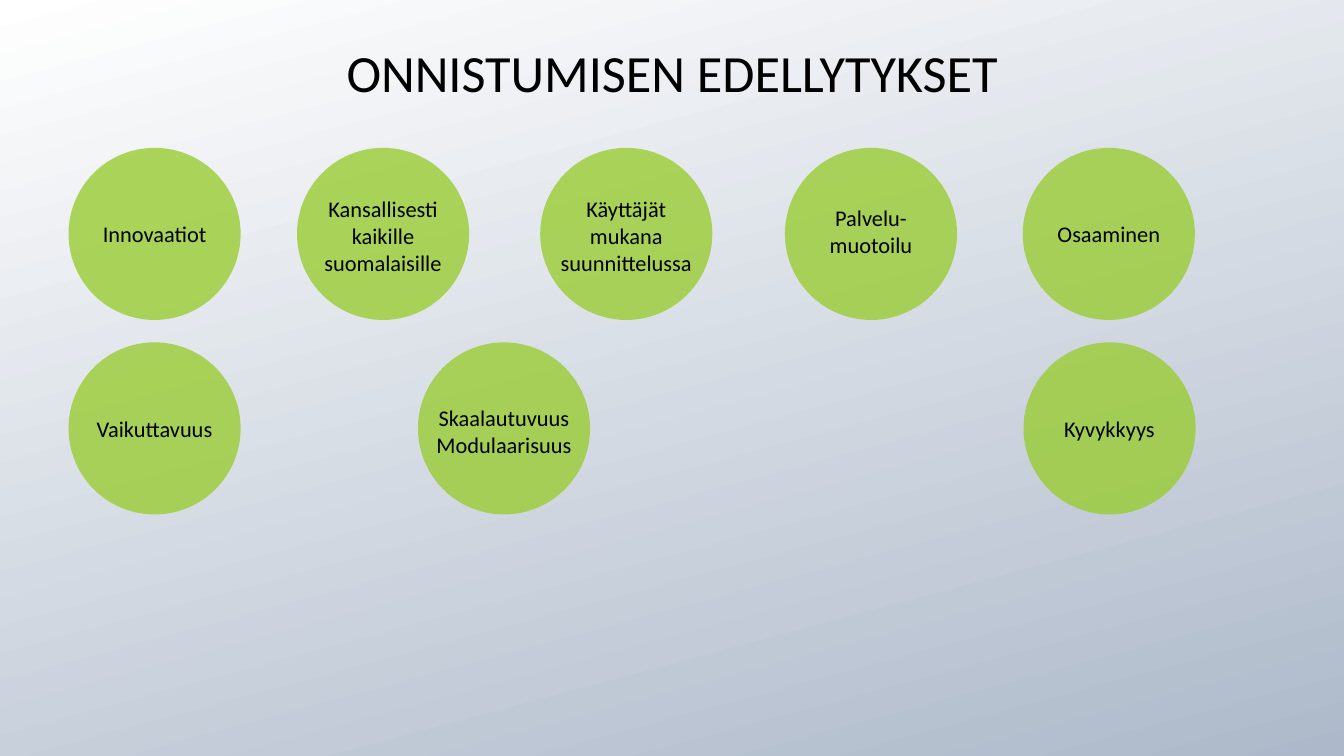
import pptx
import pptx.dml.color
import pptx.enum.shapes
import pptx.enum.text
import pptx.oxml
import pptx.oxml.ns
import pptx.util

Pt = pptx.util.Pt
COLORS = {"text": "000000", "circle": "99CC33", "light": "FFFFFF", "dark": "ADB9CA"}
DIAMETER = 92.2
LINE_HEIGHT = 14.6
INSETS = 7.2


def rgb(name):
    return pptx.dml.color.RGBColor.from_string(COLORS[name])


class Deck:
    body = {"name": "Calibri", "size": Pt(12)}
    heading = {"name": "Calibri", "size": Pt(28)}

    def __init__(self, prs):
        self.s = prs.slides.add_slide(prs.slide_layouts[6])

    def background(self, start, end, angle):
        fill = self.s.background.fill
        fill.gradient()
        fill.gradient_angle = 360 - angle
        for stop, name in zip(fill.gradient_stops, (start, end)):
            stop.color.rgb = rgb(name)

    def text(self, x, y, w, h, lines, style, frame, spacing=1.0):
        sp = self.s.shapes.add_textbox(Pt(x), Pt(y), Pt(w), Pt(h))
        tf = sp.text_frame
        for key, value in {"word_wrap": True, **frame}.items():
            setattr(tf, key, value)
        for i, line in enumerate(lines):
            p = tf.add_paragraph() if i else tf.paragraphs[0]
            p.alignment = pptx.enum.text.PP_ALIGN.CENTER
            p.line_spacing = spacing
            r = p.add_run()
            r.text = line
            for key, value in style.items():
                setattr(r.font, key, value)
            r.font.color.rgb = rgb("text")

    def circle(self, x, y):
        sp = self.s.shapes.add_shape(
            pptx.enum.shapes.MSO_SHAPE.OVAL, Pt(x), Pt(y), Pt(DIAMETER), Pt(DIAMETER))
        sp.shadow.inherit = False
        sp.fill.solid()
        sp.fill.fore_color.rgb = rgb("circle")
        sp.line.fill.background()
        color = sp.fill._xPr.find(".//" + pptx.oxml.ns.qn("a:srgbClr"))
        alpha = pptx.oxml.parse_xml(
            f'<a:alpha {pptx.oxml.ns.nsdecls("a")} val="80000"/>')
        color.append(alpha)

    def factor(self, x, y, lines, rows, shift):
        self.circle(x, y)
        h = rows * LINE_HEIGHT + INSETS
        frame = {"vertical_anchor": pptx.enum.text.MSO_ANCHOR.MIDDLE,
                 "auto_size": pptx.enum.text.MSO_AUTO_SIZE.SHAPE_TO_FIT_TEXT}
        self.text(x, y + (DIAMETER - h) / 2 + shift, DIAMETER, h, lines, self.body, frame)


def main():
    prs = pptx.Presentation()
    prs.slide_width, prs.slide_height = Pt(720), Pt(405)
    deck = Deck(prs)
    deck.background("light", "dark", 75)
    deck.text(49.7, 21.6, 620.6, 48.2, ["ONNISTUMISEN EDELLYTYKSET"], deck.heading, {}, 0.9)
    factors = {
        79.2: [
            (36.7, ["Innovaatiot"], 1, 0),
            (159.1, ["Kansallisesti kaikille suomalaisille"], 3, 1),
            (289.4, ["Käyttäjät mukana suunnittelussa"], 3, 1),
            (420.5, ["Palvelu-muotoilu"], 2, -1.4),
            (547.9, ["Osaaminen"], 1, 0),
        ],
        183.4: [
            (36.7, ["Vaikuttavuus"], 1, 0),
            (223.9, ["Skaalautuvuus", "Modulaarisuus"], 2, 1.6),
            (548.3, ["Kyvykkyys"], 1, 0),
        ],
    }
    for y, row in factors.items():
        for x, lines, rows, shift in row:
            deck.factor(x, y, lines, rows, shift)
    prs.save("out.pptx")


if __name__ == "__main__":
    main()
